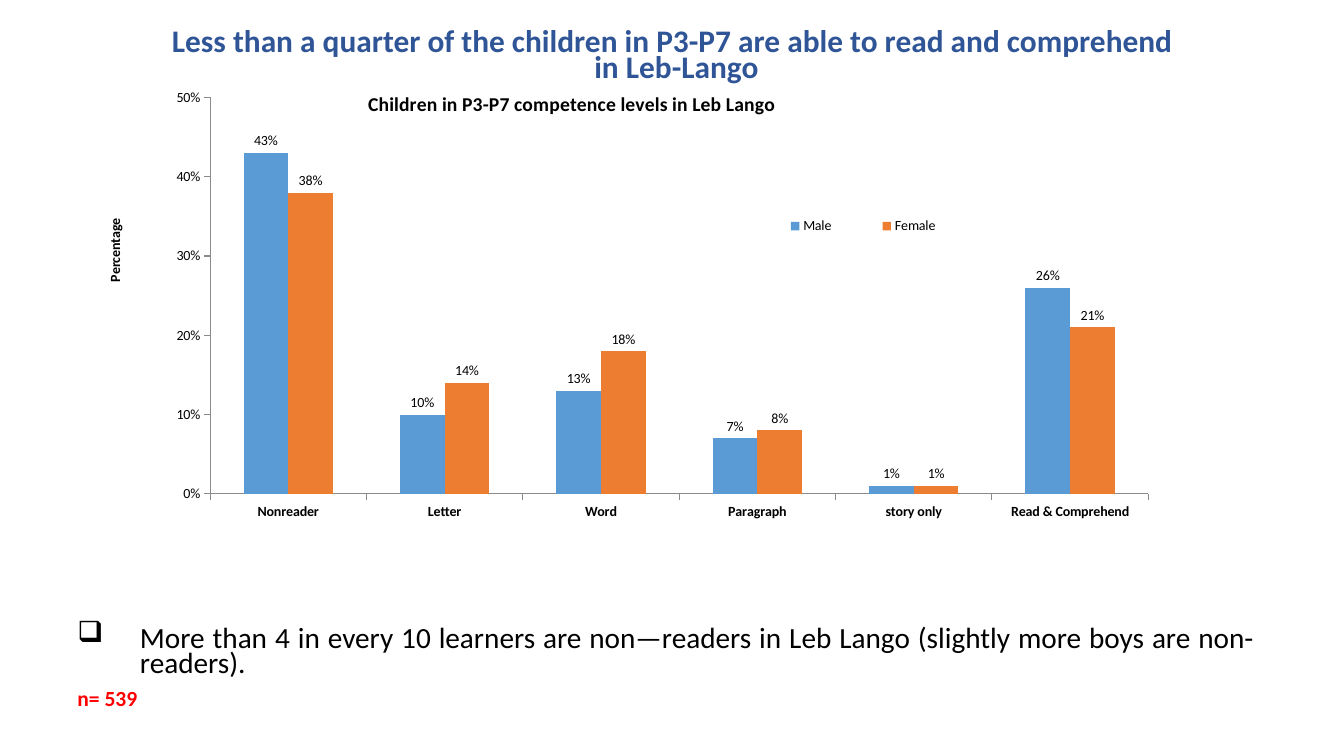
from dataclasses import dataclass
from typing import Optional

import pptx
import pptx.chart.data
import pptx.dml.color
import pptx.enum.chart
import pptx.enum.text
import pptx.oxml
import pptx.oxml.ns
import pptx.util


@dataclass(frozen=True)
class Theme:
    font: str = "Calibri"
    heading: str = "2F5597"
    body: str = "000000"
    note: str = "FF0000"
    axis: str = "8B8B8B"
    male: str = "5B9BD5"
    female: str = "ED7D31"
    heading_size: float = 22.4
    body_size: float = 20.9
    note_size: float = 15.4
    chart_title_size: float = 14
    chart_size: float = 10


@dataclass(frozen=True)
class Box:
    left: float
    top: float
    width: float
    height: float


@dataclass(frozen=True)
class Line:
    text: str
    size: float
    color: str
    alignment: pptx.enum.text.PP_ALIGN
    bold: bool = False
    space_before: float = 0
    bullet: str = ""


@dataclass(frozen=True)
class Series:
    name: str
    values: tuple[float, ...]
    color: str


THEME = Theme()
ALIGN = pptx.enum.text.PP_ALIGN
ANCHOR = pptx.enum.text.MSO_ANCHOR
HANGING_INDENT = 0.62

HEADING = [
    Line(text, THEME.heading_size, THEME.heading, ALIGN.CENTER, True)
    for text in (
        "Less than a quarter of the children in P3-P7 are able to read and comprehend ",
        "in Leb-Lango",
    )
]
FINDINGS = [
    Line(
        "More than 4 in every 10 learners are non—readers in Leb Lango "
        "(slightly more boys are non-readers).",
        THEME.body_size, THEME.body, ALIGN.JUSTIFY, space_before=10, bullet="❑",
    ),
    Line("n= 539", THEME.note_size, THEME.note, ALIGN.LEFT, True, 10),
]
LEVELS = ("Nonreader", "Letter", "Word", "Paragraph", "story only", "Read & Comprehend")
SERIES = (
    Series("Male", (0.43, 0.10, 0.13, 0.07, 0.01, 0.26), THEME.male),
    Series("Female", (0.38, 0.14, 0.18, 0.08, 0.01, 0.21), THEME.female),
)


def rgb(color: str) -> pptx.dml.color.RGBColor:
    return pptx.dml.color.RGBColor.from_string(color)


def style_font(font, size: float, color: str, bold: bool = False) -> None:
    font.name = THEME.font
    font.size = pptx.util.Pt(size)
    font.bold = bold
    font.color.rgb = rgb(color)


def add_bullet(paragraph, character: str) -> None:
    properties = paragraph._p.get_or_add_pPr()
    indent = pptx.util.Inches(HANGING_INDENT)
    properties.set("marL", str(indent))
    properties.set("indent", str(-indent))
    bullet = pptx.oxml.parse_xml(
        f'<a:buChar {pptx.oxml.ns.nsdecls("a")} char="{character}"/>'
    )
    properties.append(bullet)


def add_text(slide, box: Box, lines: list[Line], anchor: pptx.enum.text.MSO_ANCHOR) -> None:
    inches = pptx.util.Inches
    shape = slide.shapes.add_textbox(
        inches(box.left), inches(box.top), inches(box.width), inches(box.height)
    )
    frame = shape.text_frame
    frame.word_wrap = True
    frame.vertical_anchor = anchor
    for index, line in enumerate(lines):
        paragraph = frame.add_paragraph() if index else frame.paragraphs[0]
        paragraph.alignment = line.alignment
        paragraph.line_spacing = 0.7
        paragraph.space_before = pptx.util.Pt(line.space_before)
        if line.bullet:
            add_bullet(paragraph, line.bullet)
        run = paragraph.add_run()
        run.text = line.text
        style_font(run.font, line.size, line.color, line.bold)


def place(element, before: str, left: float, top: float,
          size: Optional[tuple[float, float]] = None, inner: bool = False) -> None:
    settings = [("layoutTarget", "inner")] if inner else []
    settings += [("xMode", "edge"), ("yMode", "edge"), ("x", left), ("y", top)]
    if size:
        settings += [("w", size[0]), ("h", size[1])]
    content = "".join(f'<c:{name} val="{value}"/>' for name, value in settings)
    layout = pptx.oxml.parse_xml(
        f'<c:layout {pptx.oxml.ns.nsdecls("c")}>'
        f"<c:manualLayout>{content}</c:manualLayout></c:layout>"
    )
    qualified = pptx.oxml.ns.qn
    for existing in element.findall(qualified("c:layout")):
        element.remove(existing)
    element.find(qualified(before)).addprevious(layout)


def add_title(owner, title, text: str, size: float, left: float, top: float) -> None:
    owner.has_title = True
    run = title().text_frame.paragraphs[0].add_run()
    run.text = text
    style_font(run.font, size, THEME.body, True)
    place(title()._element, "c:overlay", left, top)


def style_axes(chart) -> None:
    for axis in (chart.category_axis, chart.value_axis):
        axis.has_major_gridlines = False
        axis.major_tick_mark = pptx.enum.chart.XL_TICK_MARK.OUTSIDE
        axis.minor_tick_mark = pptx.enum.chart.XL_TICK_MARK.NONE
        axis.format.line.color.rgb = rgb(THEME.axis)
        axis.format.line.width = pptx.util.Pt(0.75)
    style_font(chart.category_axis.tick_labels.font, THEME.chart_size, THEME.body, True)
    values = chart.value_axis
    values.minimum_scale = 0
    values.maximum_scale = 0.5
    values.major_unit = 0.1
    values.tick_labels.number_format = "0%"
    values.tick_labels.number_format_is_linked = False


def add_competence_chart(slide, box: Box) -> None:
    data = pptx.chart.data.CategoryChartData(number_format="0%")
    data.categories = LEVELS
    for series in SERIES:
        data.add_series(series.name, series.values)
    inches = pptx.util.Inches
    chart = slide.shapes.add_chart(
        pptx.enum.chart.XL_CHART_TYPE.COLUMN_CLUSTERED,
        inches(box.left), inches(box.top), inches(box.width), inches(box.height), data,
    ).chart
    style_font(chart.font, THEME.chart_size, THEME.body)
    plot = chart.plots[0]
    plot.gap_width = 150
    plot.overlap = 0
    plot.vary_by_categories = False
    for drawn, series in zip(plot.series, SERIES):
        drawn.format.fill.solid()
        drawn.format.fill.fore_color.rgb = rgb(series.color)
        labels = drawn.data_labels
        labels.show_value = True
        labels.number_format = "0%"
        labels.number_format_is_linked = False
        labels.position = pptx.enum.chart.XL_LABEL_POSITION.OUTSIDE_END
    style_axes(chart)
    add_title(chart, lambda: chart.chart_title,
              "Children in P3-P7 competence levels in Leb Lango",
              THEME.chart_title_size, 0.25, 0.04)
    add_title(chart.value_axis, lambda: chart.value_axis.axis_title,
              "Percentage", THEME.chart_size, 0.03, 0.29)
    chart.has_legend = True
    chart.legend.position = pptx.enum.chart.XL_LEGEND_POSITION.RIGHT
    chart.legend.include_in_layout = False
    place(chart.legend._element, "c:overlay", 0.57, 0.28, (0.2, 0.06))
    place(plot._element.getparent(), "c:barChart", 0.12, 0.06, (0.79, 0.77), True)


def main() -> None:
    presentation = pptx.Presentation()
    presentation.slide_width = pptx.util.Inches(13.33)
    presentation.slide_height = pptx.util.Inches(7.5)
    slide = presentation.slides.add_slide(presentation.slide_layouts[6])
    add_text(slide, Box(1.01, 0.24, 11.4, 0.64), HEADING, ANCHOR.BOTTOM)
    add_text(slide, Box(0.67, 6.19, 11.87, 1), FINDINGS, ANCHOR.TOP)
    add_competence_chart(slide, Box(0.67, 0.66, 11.78, 5.11))
    presentation.save("out.pptx")


if __name__ == "__main__":
    main()
